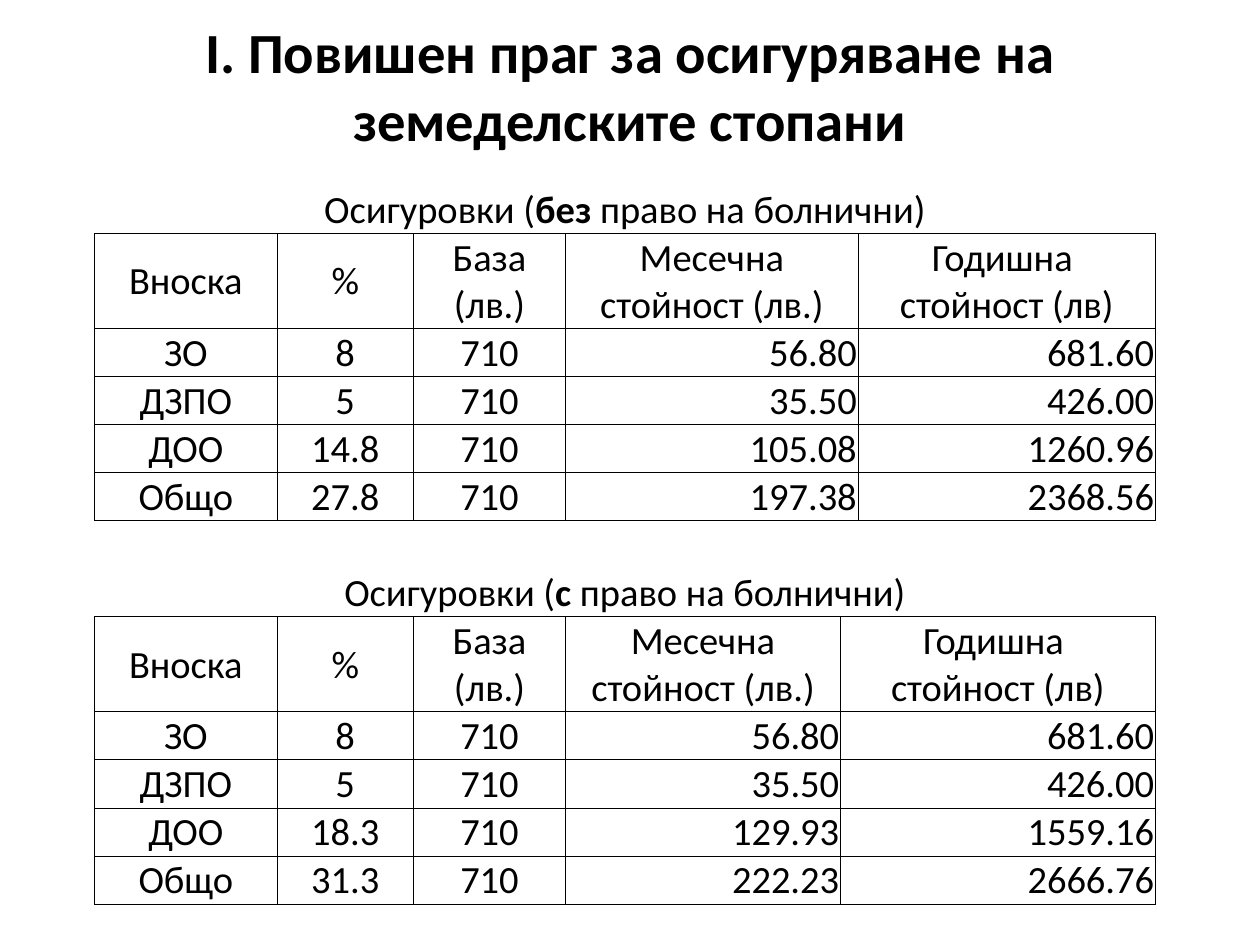
from dataclasses import dataclass

from lxml.etree import SubElement
from pptx import Presentation
from pptx.dml.color import RGBColor
from pptx.enum.text import MSO_ANCHOR as Anchor, MSO_AUTO_SIZE as AutoSize, PP_ALIGN as Align
from pptx.oxml.ns import qn
from pptx.util import Inches, Pt


@dataclass(frozen=True)
class Theme:
    font: str = "Calibri"
    ink: str = "000000"
    title_size: float = 32.4
    table_size: float = 22
    border_width: float = 0.5
    plain_style: str = "{2D5ABB26-0587-4C30-8999-92F81FD0307C}"


THEME = Theme()
TITLE = "I. Повишен праг за осигуряване на земеделските стопани"
HEADERS = ["Вноска", "%", "База (лв.)", "Месечна стойност (лв.)", "Годишна \nстойност (лв)"]
BASE = "710"
SECTIONS = [
    {
        "emphasis": "без",
        "starts": [0, 1, 2, 3, 5],
        "rows": [
            ("ЗО", "8", BASE, "56.80", "681.60"),
            ("ДЗПО", "5", BASE, "35.50", "426.00"),
            ("ДОО", "14.8", BASE, "105.08", "1260.96"),
            ("Общо", "27.8", BASE, "197.38", "2368.56"),
        ],
    },
    {
        "emphasis": "с",
        "starts": [0, 1, 2, 3, 4],
        "rows": [
            ("ЗО", "8", BASE, "56.80", "681.60"),
            ("ДЗПО", "5", BASE, "35.50", "426.00"),
            ("ДОО", "18.3", BASE, "129.93", "1559.16"),
            ("Общо", "31.3", BASE, "222.23", "2666.76"),
        ],
    },
]
COLUMN_WIDTHS = [1.45, 1.08, 1.21, 2.18, 0.14, 2.36]
ROW_HEIGHT, HEADER_HEIGHT = 0.38, 0.75
SECTION_ROWS = 2 + len(SECTIONS[0]["rows"])
SECTION_STEP = SECTION_ROWS + 1
ROW_COUNT = SECTION_STEP * len(SECTIONS) - 1


def add_run(paragraph, text, size, bold=False):
    run = paragraph.add_run()
    run.text = text
    run.font.name = THEME.font
    run.font.size = Pt(size)
    run.font.bold = bold
    run.font.color.rgb = RGBColor.from_string(THEME.ink)


def fill_cell(cell, paragraphs, align=Align.CENTER, anchor=Anchor.BOTTOM):
    cell.vertical_anchor = anchor
    for index, runs in enumerate(paragraphs):
        frame = cell.text_frame
        paragraph = frame.add_paragraph() if index else frame.paragraphs[0]
        paragraph.alignment = align
        for text, bold in runs:
            add_run(paragraph, text, THEME.table_size, bold)


def add_borders(cell):
    properties = cell._tc.get_or_add_tcPr()
    for side in ("a:lnL", "a:lnR", "a:lnT", "a:lnB"):
        line = SubElement(properties, qn(side), w=str(Pt(THEME.border_width)))
        solid = SubElement(line, qn("a:solidFill"))
        SubElement(solid, qn("a:srgbClr"), val=THEME.ink)


def merge_row(table, row, starts):
    ends = starts[1:] + [len(COLUMN_WIDTHS)]
    for start, end in zip(starts, ends):
        if end - start > 1:
            table.cell(row, start).merge(table.cell(row, end - 1))


def add_section(table, top, section):
    merge_row(table, top, [0])
    caption = [("Осигуровки (", False), (section["emphasis"], True), (" право на болнични)", False)]
    fill_cell(table.cell(top, 0), [caption])
    for offset, values in enumerate([HEADERS, *section["rows"]]):
        row = top + 1 + offset
        merge_row(table, row, section["starts"])
        for index, (column, value) in enumerate(zip(section["starts"], values)):
            align = Align.RIGHT if offset and index >= 3 else Align.CENTER
            anchor = Anchor.BOTTOM if offset else Anchor.MIDDLE
            paragraphs = [[(line, False)] for line in value.split("\n")]
            fill_cell(table.cell(row, column), paragraphs, align, anchor)
        for cell in table.rows[row].cells:
            add_borders(cell)


def add_title(slide):
    title = slide.shapes.title
    title.left, title.top, title.width, title.height = map(Inches, (0.5, 0.05, 9, 1.25))
    frame = title.text_frame
    frame.word_wrap = True
    frame.auto_size = AutoSize.NONE
    frame.vertical_anchor = Anchor.MIDDLE
    paragraph = frame.paragraphs[0]
    paragraph.alignment = Align.CENTER
    add_run(paragraph, TITLE, THEME.title_size, True)


def add_contributions_table(slide):
    heights = [HEADER_HEIGHT if row % SECTION_STEP == 1 else ROW_HEIGHT for row in range(ROW_COUNT)]
    table = slide.shapes.add_table(
        ROW_COUNT, len(COLUMN_WIDTHS), Inches(0.75), Inches(1.47),
        Inches(sum(COLUMN_WIDTHS)), Inches(sum(heights)),
    ).table
    table.first_row = table.horz_banding = False
    table._tbl.tblPr.find(qn("a:tableStyleId")).text = THEME.plain_style
    for column, width in zip(table.columns, COLUMN_WIDTHS):
        column.width = Inches(width)
    for row, height in zip(table.rows, heights):
        row.height = Inches(height)
    for index, section in enumerate(SECTIONS):
        add_section(table, index * SECTION_STEP, section)
    merge_row(table, SECTION_ROWS, SECTIONS[0]["starts"])
    for cell in table.iter_cells():
        cell.margin_left = cell.margin_right = cell.margin_top = Inches(0.01)
        cell.margin_bottom = 0
        cell.fill.background()


def main():
    presentation = Presentation()
    presentation.slide_width, presentation.slide_height = Inches(10), Inches(7.5)
    slide = presentation.slides.add_slide(presentation.slide_layouts[5])
    add_title(slide)
    add_contributions_table(slide)
    presentation.save("out.pptx")


if __name__ == "__main__":
    main()
